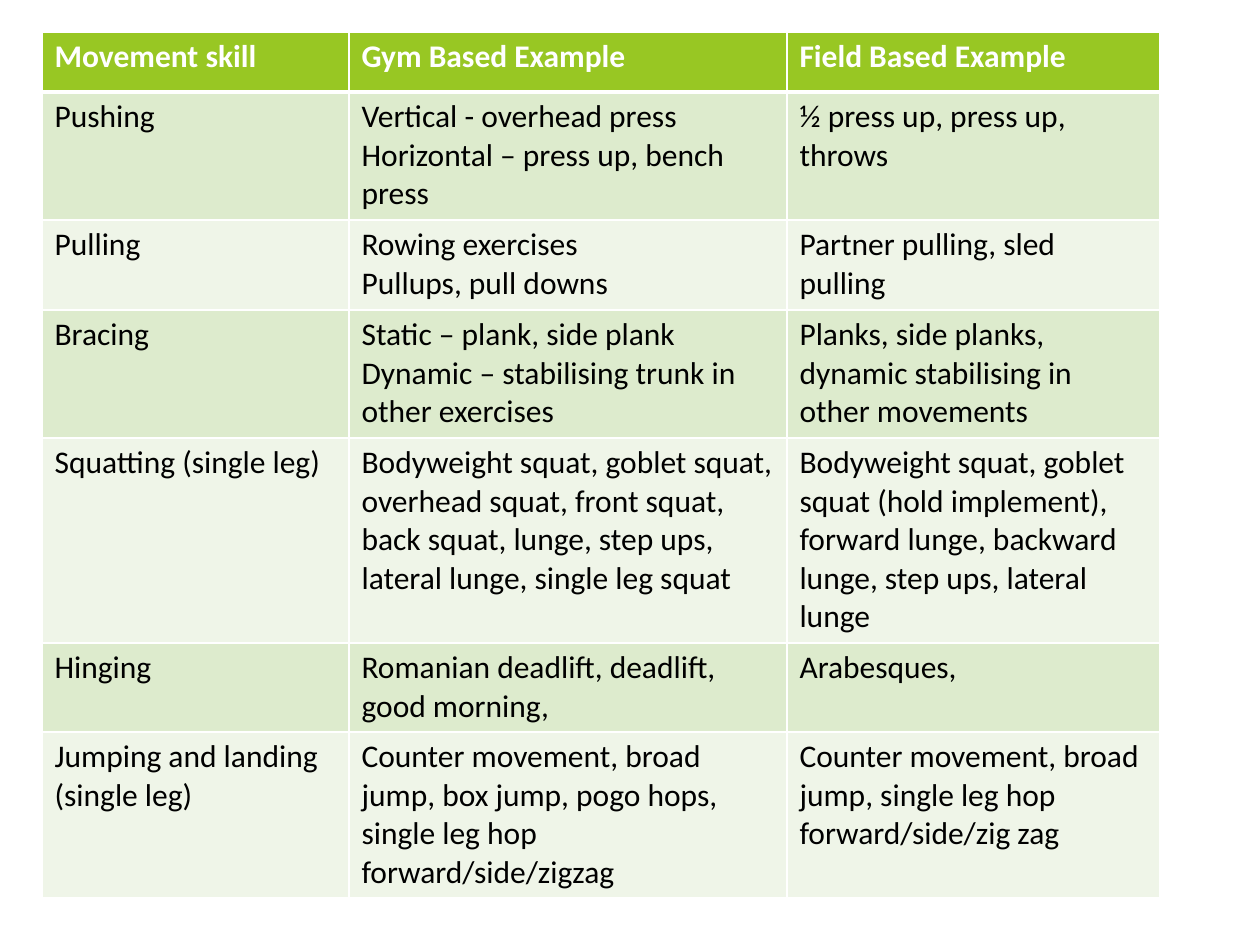
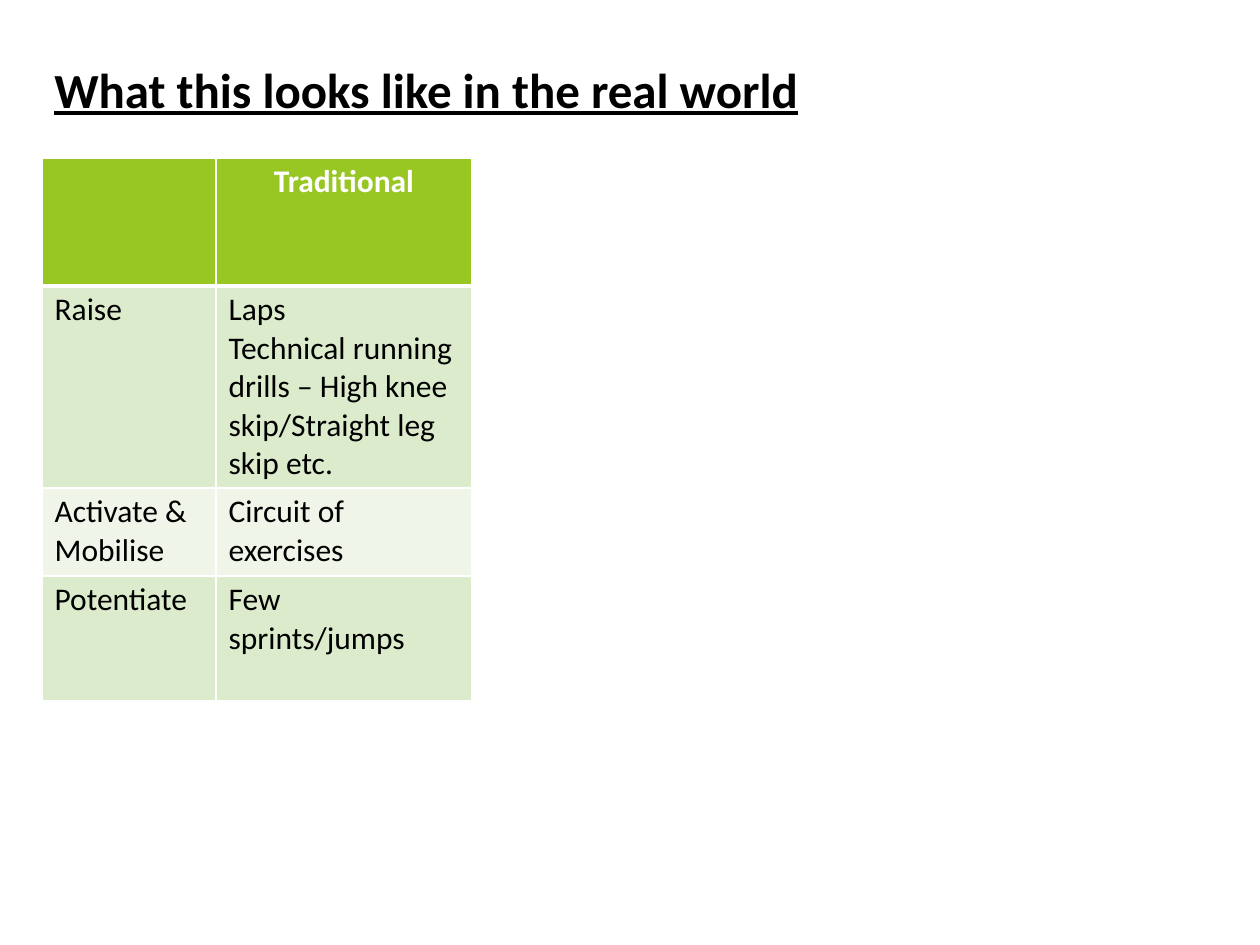
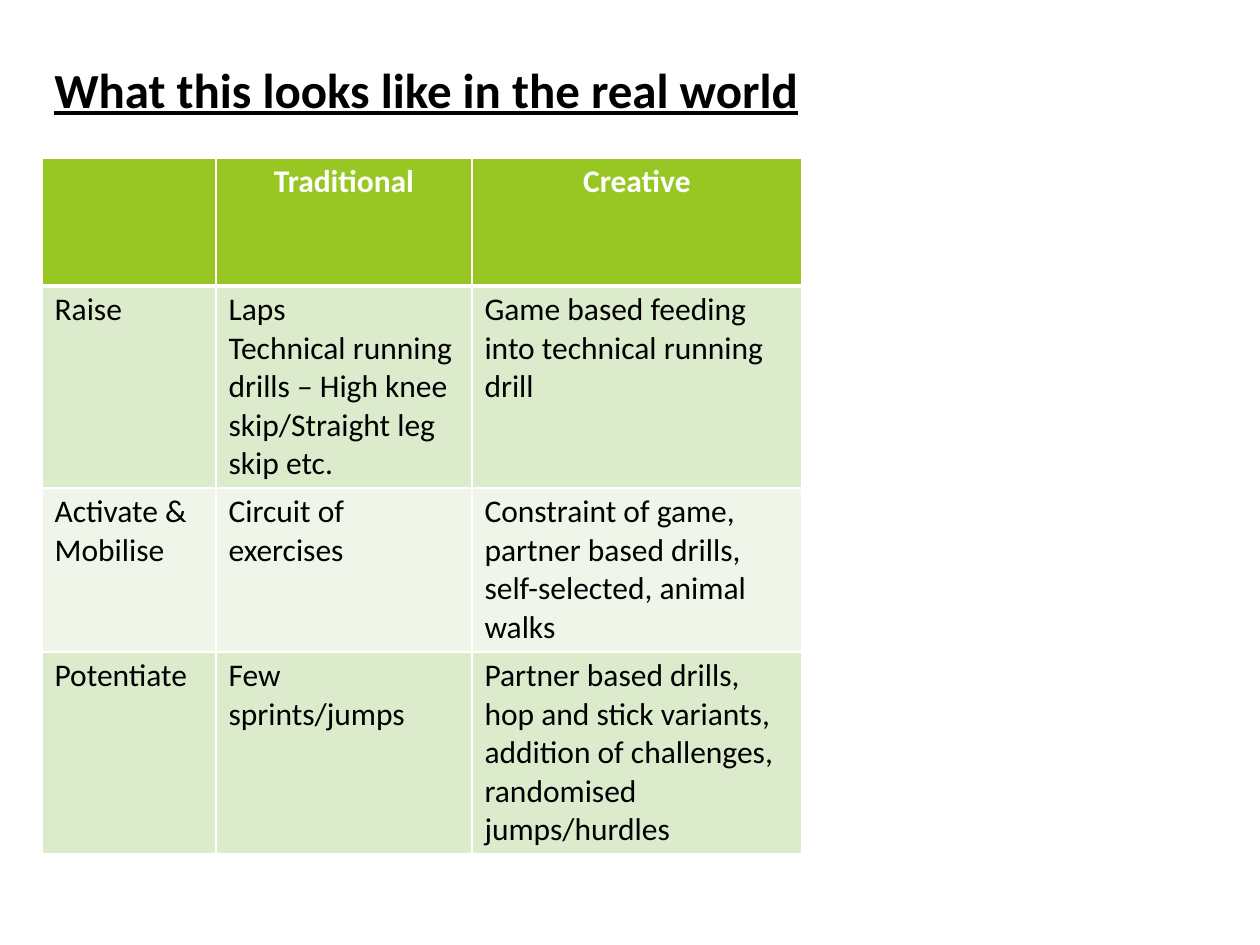
from dataclasses import dataclass

from lxml.etree import SubElement
from pptx import Presentation
from pptx.dml.color import RGBColor
from pptx.enum.text import PP_ALIGN
from pptx.oxml.ns import qn
from pptx.util import Pt

PX = 914400 / 126


@dataclass(frozen=True)
class Theme:
    font: str = "Calibri"
    title_size: int = 28
    table_size: int = 18
    text: str = "000000"
    header_text: str = "FFFFFF"
    header: str = "98C723"
    bands: tuple = ("DDEBCD", "EFF5E8")
    rule: str = "FFFFFF"
    rule_width: int = 1
    header_rule_width: int = 3


theme = Theme()


def style_text(paragraph, size, color, bold):
    font = paragraph.font
    font.name, font.size, font.bold = theme.font, Pt(size), bold
    font.color.rgb = RGBColor.from_string(color)


def add_grid(slide, top, columns, row_heights, rows, header_align, margins):
    """Draw a table with a header row and banded body, lengths in px."""
    left = 42
    grid = slide.shapes.add_table(
        len(rows), len(columns), *(int(n * PX) for n in (left, top, sum(columns), sum(row_heights)))
    ).table
    grid.horz_banding = False
    for column, width in zip(grid.columns, columns):
        column.width = int(width * PX)
    for r, (row, height) in enumerate(zip(rows, row_heights)):
        grid.rows[r].height = int(height * PX)
        is_header = r == 0
        for c, wording in enumerate(row):
            cell = grid.cell(r, c)
            cell.margin_top, cell.margin_bottom = (int(m * PX) for m in margins)
            cell.text = wording
            for paragraph in cell.text_frame.paragraphs:
                style_text(paragraph, theme.table_size,
                           theme.header_text if is_header else theme.text, is_header)
                paragraph.alignment = header_align if is_header else PP_ALIGN.LEFT

            # Cell borders come before the fill in the cell properties
            properties = cell._tc.get_or_add_tcPr()
            for side in ("L", "R", "T", "B"):
                thick = (r, side) in ((0, "B"), (1, "T"))
                width = theme.header_rule_width if thick else theme.rule_width
                border = SubElement(properties, qn(f"a:ln{side}"), w=str(Pt(width)))
                border_fill = SubElement(border, qn("a:solidFill"))
                SubElement(border_fill, qn("a:srgbClr"), val=theme.rule)
            cell.fill.solid()
            fill_color = theme.header if is_header else theme.bands[(r - 1) % 2]
            cell.fill.fore_color.rgb = RGBColor.from_string(fill_color)


prs = Presentation()
prs.slide_width, prs.slide_height = int(1260 * PX), int(945 * PX)
blank = prs.slide_layouts[6]

# Movement skills
movement_skills = [
    ("Movement skill", "Gym Based Example", "Field Based Example"),
    ("Pushing", "Vertical - overhead press\nHorizontal – press up, bench press",
     "½ press up, press up, throws"),
    ("Pulling", "Rowing exercises\nPullups, pull downs", "Partner pulling, sled pulling"),
    ("Bracing", "Static – plank, side plank\nDynamic – stabilising trunk in other exercises",
     "Planks, side planks, dynamic stabilising in other movements"),
    ("Squatting (single leg)",
     "Bodyweight squat, goblet squat, overhead squat, front squat, back squat, lunge, "
     "step ups, lateral lunge, single leg squat",
     "Bodyweight squat, goblet squat (hold implement), forward lunge, backward lunge, "
     "step ups, lateral lunge"),
    ("Hinging", "Romanian deadlift, deadlift, good morning,", "Arabesques,"),
    ("Jumping and landing (single leg)",
     "Counter movement, broad jump, box jump, pogo hops, single leg hop forward/side/zigzag",
     "Counter movement, broad jump, single leg hop forward/side/zig zag"),
]
add_grid(prs.slides.add_slide(blank), 32, (307, 438, 373), (60, 128, 90, 128, 205, 89, 166),
         movement_skills, PP_ALIGN.LEFT, margins=(6, 6))

# Warm-up in the real world: first the traditional column, then the creative one beside it
warm_up = [
    ("", "Traditional", "Creative"),
    ("Raise",
     "Laps\nTechnical running drills – High knee skip/Straight leg skip etc.",
     "Game based feeding into technical running drill"),
    ("Activate & Mobilise", "Circuit of exercises",
     "Constraint of game, partner based drills, self-selected, animal walks"),
    ("Potentiate", "Few sprints/jumps",
     "Partner based drills, hop and stick variants, addition of challenges, "
     "randomised jumps/hurdles"),
]
warm_up_columns = (174, 256, 330)
for shown, row_heights in ((2, (128, 202, 88, 125)), (3, (128, 202, 164, 202))):
    slide = prs.slides.add_slide(blank)
    title = slide.shapes.add_textbox(*(int(n * PX) for n in (42, 53, 1166, 170))).text_frame
    title.word_wrap = True
    title.text = "What this looks like in the real world"
    style_text(title.paragraphs[0], theme.title_size, theme.text, True)
    title.paragraphs[0].font.underline = True
    add_grid(slide, 158, warm_up_columns[:shown], row_heights,
             [row[:shown] for row in warm_up], PP_ALIGN.CENTER, margins=(5, 4))

prs.save("out.pptx")
